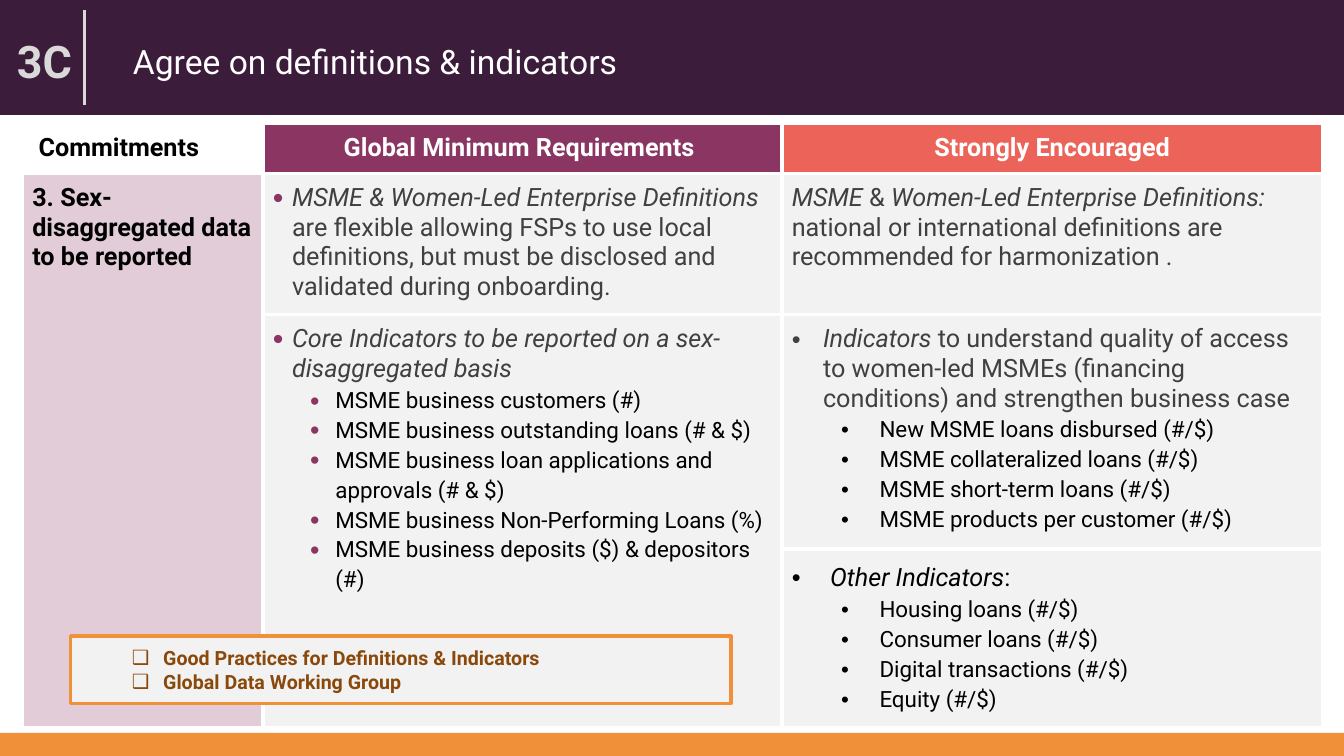
import pptx
import pptx.util
import pptx.dml.color
import pptx.enum.shapes
import pptx.enum.text
import pptx.oxml.ns
import lxml.etree

WIDTH, HEIGHT = 13.33, 7.5
FONT = "Roboto"
COLORS = {
    "plum": "3C1C3B", "orange": "F0913A", "purple": "8B3562", "coral": "EC6359",
    "pink": "E2CCD7", "pale": "F2F2F2", "white": "FFFFFF", "black": "000000",
    "dark": "404040", "silver": "D9D9D9", "brown": "8A480B",
}
# Text styles: indent and hang are in inches
HEADING = dict(size=18, bold=True, color="white", align="CENTER")
LABEL = dict(size=18, bold=True)
BODY = dict(size=18, color="dark")
REQUIRED = dict(BODY, indent=0.19, hang=0.19, before=12, bullet="•",
                bullet_color="purple")
REQUIRED_ITEM = dict(REQUIRED, size=16, color="black", indent=0.62, hang=0.25,
                     before=0, line=1.15, level=1)
ENCOURAGED = dict(BODY, indent=0.31, hang=0.31, before=12, bullet="•")
OTHER = dict(size=18, indent=0.38, hang=0.38, line=1.15, bullet="•")
ENCOURAGED_ITEM = dict(OTHER, size=16, indent=0.87, level=1)
PRACTICE = dict(size=14, bold=True, color="brown", indent=0.82, hang=0.31, bullet="❑")


def rgb(name):
    return pptx.dml.color.RGBColor.from_string(COLORS[name])


def add_node(parent, tag, **attributes):
    return lxml.etree.SubElement(parent, pptx.oxml.ns.qn(tag), attributes)


def write_paragraph(paragraph, runs, size, color="black", bold=False, align="LEFT",
                    indent=0, hang=0, before=0, line=None, level=0,
                    bullet=None, bullet_color=None):
    paragraph.alignment = getattr(pptx.enum.text.PP_ALIGN, align)
    paragraph.level = level
    paragraph.space_before = pptx.util.Pt(before)
    if line:
        paragraph.line_spacing = line
    properties = paragraph._p.get_or_add_pPr()
    properties.set("marL", str(pptx.util.Inches(indent)))
    properties.set("indent", str(-pptx.util.Inches(hang)))
    if bullet_color:
        add_node(add_node(properties, "a:buClr"), "a:srgbClr", val=COLORS[bullet_color])
        add_node(properties, "a:buSzPct", val="120000")
    if bullet:
        add_node(properties, "a:buFont", typeface="Arial")
        add_node(properties, "a:buChar", char=bullet)
    for text, italic in runs:
        run = paragraph.add_run()
        run.text = text
        run.font.name = FONT
        run.font.size = pptx.util.Pt(size)
        run.font.bold, run.font.italic = bold, italic
        run.font.color.rgb = rgb(color)


def write_text(frame, paragraphs):
    """Each paragraph is a style and its runs, or a style and one plain text."""
    frame.word_wrap = True
    for index, (style, runs) in enumerate(paragraphs):
        paragraph = frame.add_paragraph() if index else frame.paragraphs[0]
        if isinstance(runs, str):
            runs = [(runs, False)]
        write_paragraph(paragraph, runs, **style)


def items(style, *texts):
    return [(style, text) for text in texts]


def add_box(slide, box, fill, outline=None):
    shape = slide.shapes.add_shape(pptx.enum.shapes.MSO_SHAPE.RECTANGLE,
                                   *map(pptx.util.Inches, box))
    shape.shadow.inherit = False
    shape.fill.solid()
    shape.fill.fore_color.rgb = rgb(fill)
    if outline:
        shape.line.color.rgb = rgb(outline)
        shape.line.width = pptx.util.Pt(2.25)
    else:
        shape.line.fill.background()
    return shape


def add_text(slide, box, paragraphs):
    frame = slide.shapes.add_textbox(*map(pptx.util.Inches, box)).text_frame
    frame.vertical_anchor = pptx.enum.text.MSO_ANCHOR.MIDDLE
    write_text(frame, paragraphs)


def add_header(slide, box):
    left, top, width, height = box
    add_box(slide, box, "plum")
    add_text(slide, (left + 1.1, top, width - 1.29, height),
             [(dict(size=24, color="white", indent=0.12, line=1.2),
               "Agree on definitions & indicators")])
    # Divider between the section number and the title
    x = left + 0.84
    divider = slide.shapes.add_connector(
        pptx.enum.shapes.MSO_CONNECTOR.STRAIGHT,
        *map(pptx.util.Inches, (x, top + 0.1, x, top + height - 0.1)))
    divider.line.color.rgb = rgb("silver")
    divider.line.width = pptx.util.Pt(2.25)
    add_node(divider._element.spPr, "a:effectLst")
    add_text(slide, (left + 0.07, top + 0.28, 0.82, 0.64),
             [(dict(size=32, color="silver", bold=True), "3C")])


def style_cell(cell, fill):
    if fill:
        cell.fill.solid()
        cell.fill.fore_color.rgb = rgb(fill)
    else:
        cell.fill.background()
    cell.margin_left = cell.margin_right = pptx.util.Inches(0.1)
    cell.margin_top = cell.margin_bottom = pptx.util.Inches(0.1)
    properties = cell._tc.get_or_add_tcPr()
    for index, side in enumerate("LRTB"):
        border = add_node(properties, f"a:ln{side}", w=str(pptx.util.Pt(3)))
        add_node(add_node(border, "a:solidFill"), "a:srgbClr", val=COLORS["white"])
        properties.insert(index, border)


def add_commitments(slide, box):
    left, top, width, height = box
    column_shares = (0.185, 0.399, 0.416)
    row_shares = (0.084, 0.236, 0.387, 0.293)
    table = slide.shapes.add_table(4, 3, *map(pptx.util.Inches, box)).table
    for column, share in zip(table.columns, column_shares):
        column.width = pptx.util.Inches(width * share)
    for row, share in zip(table.rows, row_shares):
        row.height = pptx.util.Inches(height * share)

    fills = [(None, "purple", "coral")] + [("pink", "pale", "pale")] * 3
    for row, row_fills in enumerate(fills):
        for column, fill in enumerate(row_fills):
            style_cell(table.cell(row, column), fill)
    table.cell(1, 0).merge(table.cell(3, 0))
    table.cell(2, 1).merge(table.cell(3, 1))

    contents = {
        (0, 0): [(LABEL, " Commitments")],
        (0, 1): [(HEADING, "Global Minimum Requirements ")],
        (0, 2): [(HEADING, "Strongly Encouraged")],
        (1, 0): [(LABEL, "3. Sex-disaggregated data to be reported")],
        (1, 1): [(REQUIRED, [
            ("MSME & Women-Led Enterprise Definitions ", True),
            ("are flexible allowing FSPs to use local definitions, but must be "
             "disclosed and validated during onboarding.", False)])],
        (1, 2): [(BODY, [
            ("MSME ", True), ("& ", False),
            ("Women-Led Enterprise Definitions: ", True),
            ("national or international definitions are recommended for "
             "harmonization .", False)])],
        (2, 1): [(REQUIRED, [("Core Indicators to be reported on a "
                              "sex-disaggregated basis", True)])]
        + items(REQUIRED_ITEM,
                "MSME business customers (#)",
                "MSME business outstanding loans (# & $)",
                "MSME business loan applications and approvals (# & $)",
                "MSME business Non-Performing Loans (%)",
                "MSME business deposits ($) & depositors (#)"),
        (2, 2): [(ENCOURAGED, [
            ("Indicators ", True),
            ("to understand quality of access to women-led MSMEs (financing "
             "conditions) and strengthen business case", False)])]
        + items(ENCOURAGED_ITEM,
                "New MSME loans disbursed (#/$)", "MSME collateralized loans (#/$)",
                "MSME short-term loans (#/$)", "MSME products per customer (#/$)"),
        (3, 2): [(OTHER, [("Other Indicators", True), (":", False)])]
        + items(ENCOURAGED_ITEM, "Housing loans (#/$)", "Consumer loans (#/$)",
                "Digital transactions (#/$)", "Equity (#/$)"),
    }
    for (row, column), paragraphs in contents.items():
        write_text(table.cell(row, column).text_frame, paragraphs)


def add_practices(slide, box):
    frame = add_box(slide, box, "pale", "orange").text_frame
    frame.vertical_anchor = pptx.enum.text.MSO_ANCHOR.MIDDLE
    write_text(frame, items(PRACTICE, "Good Practices for Definitions & Indicators",
                            "Global Data Working Group"))


def main():
    presentation = pptx.Presentation()
    presentation.slide_width = pptx.util.Inches(WIDTH)
    presentation.slide_height = pptx.util.Inches(HEIGHT)
    slide = presentation.slides.add_slide(presentation.slide_layouts[6])
    # Footer band
    add_box(slide, (0, HEIGHT - 0.23, WIDTH, 0.23), "orange")
    add_header(slide, (0, 0, WIDTH, 1.14))
    add_commitments(slide, (0.22, 1.22, 12.9, 5.85))
    add_practices(slide, (0.7, 6.31, 6.55, 0.67))
    presentation.save("out.pptx")


if __name__ == "__main__":
    main()
